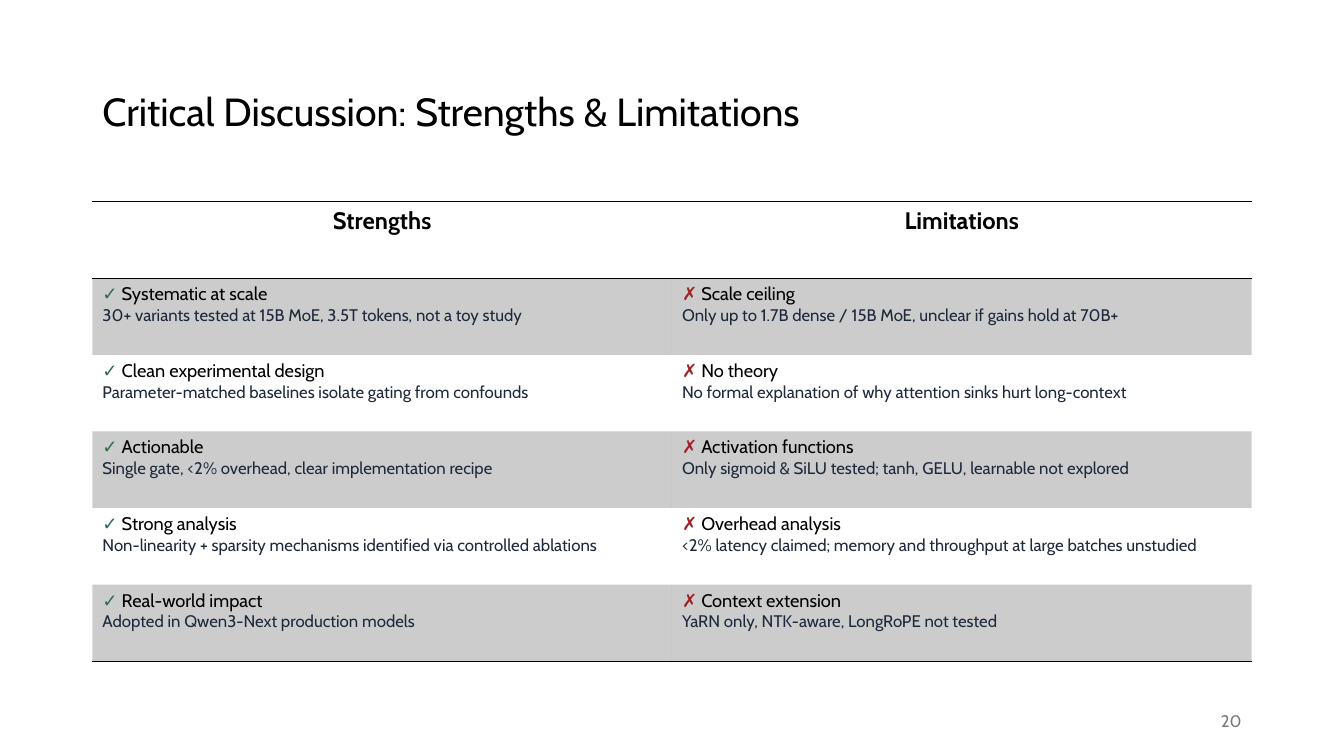
import pptx
import pptx.dml.color
import pptx.enum.text
import pptx.oxml
import pptx.oxml.ns
import pptx.util

Pt = pptx.util.Pt
ALIGN = pptx.enum.text.PP_ALIGN
MIDDLE = pptx.enum.text.MSO_ANCHOR.MIDDLE
FONT = "Cabin"
NO_STYLE = "{2D5ABB26-0587-4C30-8999-92F81FD0307C}"
COLOURS = {
    "black": "000000",
    "strength": "2D6A4F",
    "limitation": "9B2226",
    "detail": "1E293B",
    "number": "797979",
}
HEADINGS = ("Strengths", "Limitations")
MARKS = (("✓ ", "strength"), ("✗ ", "limitation"))
POINTS = [
    (("Systematic at scale",
      "30+ variants tested at 15B MoE, 3.5T tokens, not a toy study"),
     ("Scale ceiling",
      "Only up to 1.7B dense / 15B MoE, unclear if gains hold at 70B+")),
    (("Clean experimental design",
      "Parameter-matched baselines isolate gating from confounds"),
     ("No theory",
      "No formal explanation of why attention sinks hurt long-context")),
    (("Actionable",
      "Single gate, <2% overhead, clear implementation recipe"),
     ("Activation functions",
      "Only sigmoid & SiLU tested; tanh, GELU, learnable not explored")),
    (("Strong analysis",
      "Non-linearity + sparsity mechanisms identified via controlled ablations"),
     ("Overhead analysis",
      "<2% latency claimed; memory and throughput at large batches unstudied")),
    (("Real-world impact", "Adopted in Qwen3-Next production models"),
     ("Context extension", "YaRN only, NTK-aware, LongRoPE not tested")),
]


def add_text(paragraph, text, size=13, colour="black", bold=False, align=ALIGN.LEFT):
    """Append a formatted run to the paragraph."""
    paragraph.alignment = align
    run = paragraph.add_run()
    run.text = text
    run.font.name = FONT
    run.font.size = Pt(size)
    run.font.bold = bold
    run.font.color.rgb = pptx.dml.color.RGBColor.from_string(COLOURS[colour])


def style_cell(cell, shaded=False, rules=()):
    """Set the cell's fill and its horizontal rules, given top first."""
    properties = cell._tc.get_or_add_tcPr()
    cell.fill.background()
    if shaded:
        cell.fill.solid()
        cell.fill.fore_color.rgb = pptx.dml.color.RGBColor.from_string(COLOURS["black"])
        colour = properties.find(".//" + pptx.oxml.ns.qn("a:srgbClr"))
        colour.append(pptx.oxml.parse_xml(
            f'<a:alpha {pptx.oxml.ns.nsdecls("a")} val="20000"/>'))
    for index, side in enumerate(rules):
        properties.insert(index, pptx.oxml.parse_xml(
            f'<a:{side} {pptx.oxml.ns.nsdecls("a")} w="{Pt(1)}"><a:solidFill>'
            f'<a:srgbClr val="{COLOURS["black"]}"/></a:solidFill></a:{side}>'))


def add_title(slide, left, top, width, height):
    """Place the slide title in its box."""
    title = slide.shapes.title
    title.left, title.top, title.width, title.height = map(Pt, (left, top, width, height))
    title.text_frame.vertical_anchor = MIDDLE
    paragraph = title.text_frame.paragraphs[0]
    paragraph.line_spacing = 0.9
    add_text(paragraph, "Critical Discussion: Strengths & Limitations", size=28)


def add_comparison(slide, left, top, width, height):
    """Place the table of strengths and limitations in its box."""
    row_count = len(POINTS) + 1
    frame = slide.shapes.add_table(
        row_count, len(HEADINGS), Pt(left), Pt(top), Pt(width), Pt(height))
    table = frame.table
    table.first_row = table.horz_banding = False
    table._tbl.tblPr.find(pptx.oxml.ns.qn("a:tableStyleId")).text = NO_STYLE
    for row in table.rows:
        row.height = Pt(height / row_count)
    for column, heading in enumerate(HEADINGS):
        cell = table.cell(0, column)
        style_cell(cell, rules=("lnT", "lnB"))
        add_text(cell.text_frame.paragraphs[0], heading, size=17, bold=True,
                 align=ALIGN.CENTER)
    for row, points in enumerate(POINTS, start=1):
        rules = ("lnB",) if row == len(POINTS) else ()
        for column, (name, detail) in enumerate(points):
            cell = table.cell(row, column)
            style_cell(cell, shaded=row % 2 == 1, rules=rules)
            mark, colour = MARKS[column]
            paragraph = cell.text_frame.paragraphs[0]
            add_text(paragraph, mark, colour=colour)
            add_text(paragraph, name)
            add_text(cell.text_frame.add_paragraph(), detail, size=12, colour="detail")


def add_page_number(slide, left, top, width, height):
    """Place the page number at the right of its box."""
    box = slide.shapes.add_textbox(Pt(left), Pt(top), Pt(width), Pt(height))
    box.text_frame.word_wrap = True
    box.text_frame.vertical_anchor = MIDDLE
    add_text(box.text_frame.paragraphs[0], "20", size=12, colour="number",
             align=ALIGN.RIGHT)


def main():
    """Build the slide and save it."""
    presentation = pptx.Presentation()
    presentation.slide_width, presentation.slide_height = Pt(960), Pt(540)
    slide = presentation.slides.add_slide(presentation.slide_layouts[5])
    left, width = 66, 828
    add_title(slide, left, 28.75, width, 104.4)
    add_comparison(slide, left, 144, width, 328.32)
    add_page_number(slide, left + width - 216, 500.5, 216, 28.75)
    presentation.save("out.pptx")


if __name__ == "__main__":
    main()
